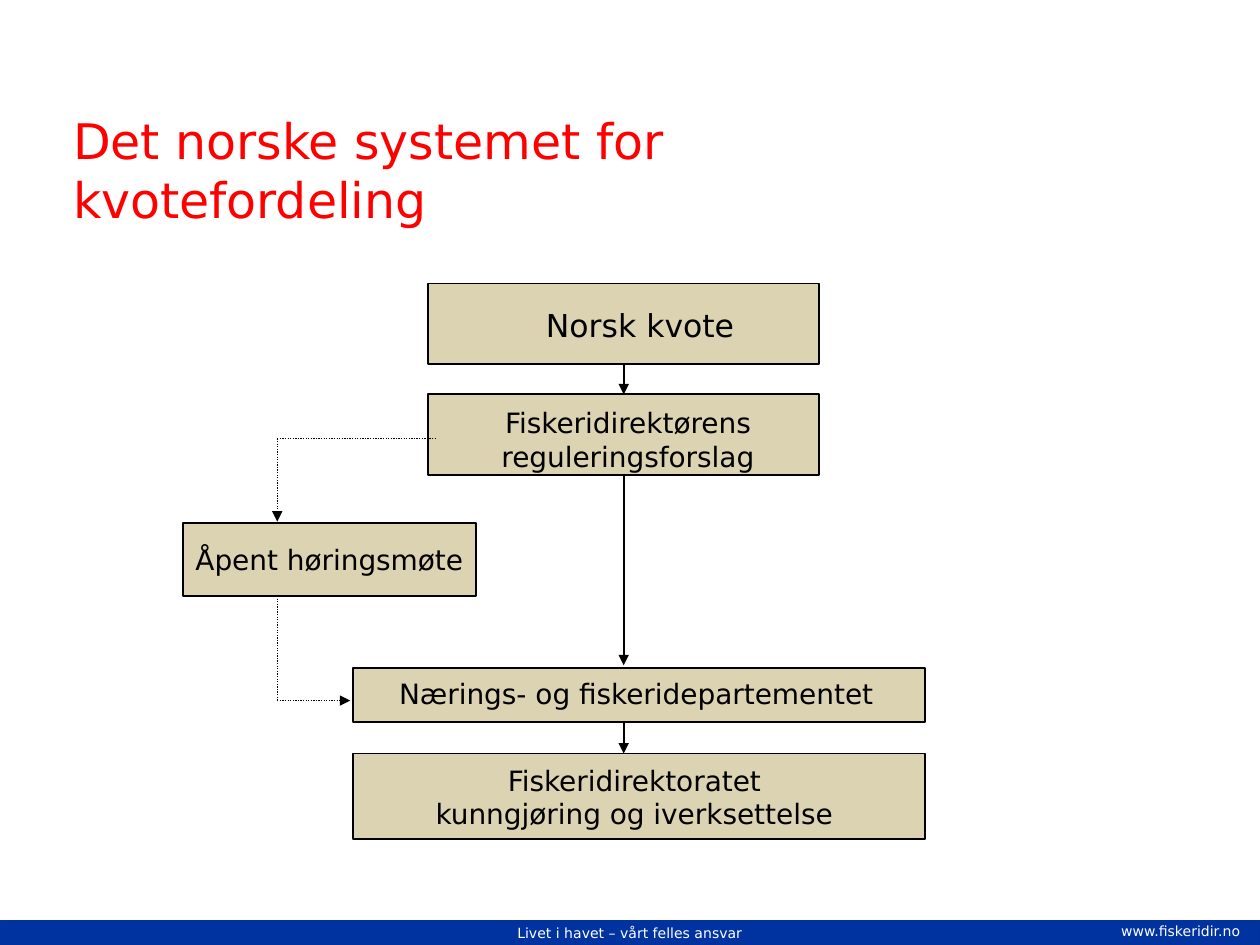
"""Build a slide showing the Norwegian quota allocation process."""
from lxml import etree
from pptx import Presentation
from pptx.dml.color import RGBColor
from pptx.enum import dml, shapes, text
from pptx.oxml import ns
from pptx.util import Inches, Pt

COLORS = {"sand": "DBD3B1", "ink": "000000", "heading": "FF0000",
          "band": "0033A0", "band_edge": "00329C", "white": "FFFFFF"}
LEFT, CENTER = text.PP_ALIGN.LEFT, text.PP_ALIGN.CENTER
TOP, MIDDLE = text.MSO_ANCHOR.TOP, text.MSO_ANCHOR.MIDDLE


class FlowSlide:
    """Hold the style and the current slide, and draw its elements."""

    font = "DejaVu Sans"

    def __init__(self, deck):
        self.slide = deck.slides.add_slide(deck.slide_layouts[5])
        self.target = self.slide.shapes

    def color(self, name):
        return RGBColor.from_string(COLORS[name])

    def set_text(self, holder, lines, size, color="ink", align=CENTER, anchor=TOP, wrap=True):
        frame = holder.text_frame
        frame.text = "\n".join(lines)
        layout = {"word_wrap": wrap, "vertical_anchor": anchor,
                  "auto_size": text.MSO_AUTO_SIZE.NONE}
        for key, value in layout.items():
            setattr(frame, key, value)
        for paragraph in frame.paragraphs:
            paragraph.alignment = align
            for key, value in {"name": self.font, "size": Pt(size)}.items():
                setattr(paragraph.font, key, value)
            paragraph.font.color.rgb = self.color(color)

    def title(self, bounds, words):
        heading = self.slide.shapes.title
        for key, value in zip(("left", "top", "width", "height"), bounds):
            setattr(heading, key, Inches(value))
        self.set_text(heading, [words], 28, "heading", LEFT, MIDDLE)

    def box(self, bounds, fill="sand", edge="ink", weight=1):
        step = self.target.add_shape(shapes.MSO_SHAPE.RECTANGLE, *map(Inches, bounds))
        step.shadow.inherit = False
        step.fill.solid()
        step.fill.fore_color.rgb = self.color(fill)
        if edge:
            step.line.color.rgb = self.color(edge)
            step.line.width = Pt(weight)
        else:
            step.line.fill.background()
        return step

    def label(self, bounds, lines, size=16, **style):
        caption = self.target.add_textbox(*map(Inches, bounds))
        self.set_text(caption, lines, size, **style)

    def link(self, start, end, arrow=True, dotted=False, source=None, goal=None):
        line = self.target.add_connector(
            shapes.MSO_CONNECTOR.STRAIGHT, *map(Inches, (*start, *end)))
        if source:
            line.begin_connect(source, 2)
        if goal:
            line.end_connect(goal, 0)
        line.line.color.rgb = self.color("ink")
        line.line.width = Pt(0.75 if dotted else 1)
        if dotted:
            line.line.dash_style = dml.MSO_LINE.ROUND_DOT
        properties = line._element.spPr
        if arrow:
            outline = properties.find(ns.qn("a:ln"))
            etree.SubElement(outline, ns.qn("a:tailEnd"), type="triangle")
        etree.SubElement(properties, ns.qn("a:effectLst"))


def main():
    deck = Presentation()
    deck.slide_width, deck.slide_height = Inches(10), Inches(7.5)
    flow = FlowSlide(deck)

    band = flow.box((0, 7.31, 10, 0.19), "band", "band_edge", 0.75)
    flow.set_text(band, ["Livet i havet – vårt felles ansvar"], 8, "white", anchor=MIDDLE)
    flow.label((8.8, 7.27, 1.92, 0.24), ["www.fiskeridir.no"], 8, color="white", align=LEFT)
    flow.title((0.48, 0.77, 6.03, 1.15), "Det norske systemet for kvotefordeling")

    proposal = flow.box((3.4, 3.13, 3.1, 0.64))
    quota = flow.box((3.4, 2.25, 3.1, 0.64))
    flow.box((2.8, 5.3, 4.54, 0.43))
    hearing = flow.box((1.45, 4.15, 2.33, 0.58))
    flow.set_text(hearing, ["Åpent høringsmøte"], 16, anchor=MIDDLE, wrap=False)

    main_x, hearing_x = 4.95, 2.2
    flow.link((main_x, 2.89), (main_x, 3.13), source=quota, goal=proposal)
    flow.link((main_x, 3.77), (main_x, 5.28), source=proposal)
    flow.link((main_x, 5.73), (main_x, 5.98))

    flow.label((4.12, 2.38, 1.92, 0.4), ["Norsk kvote"], 18)
    flow.label((3.57, 3.17, 2.83, 0.63), ["Fiskeridirektørens", "reguleringsforslag"])
    flow.label((3.04, 5.32, 4.02, 0.37), ["Nærings- og fiskeridepartementet"], wrap=False)

    flow.target = flow.slide.shapes.add_group_shape().shapes
    flow.box((2.8, 5.98, 4.54, 0.68))
    announcement = flow.box((3.24, 6.01, 3.59, 0.64), edge=None)
    flow.set_text(announcement, ["Fiskeridirektoratet", "kunngjøring og iverksettelse"], 16)
    flow.target = flow.slide.shapes

    flow.link((hearing_x, 3.48), (3.45, 3.48), arrow=False, dotted=True)
    flow.link((hearing_x, 3.48), (hearing_x, 4.14), dotted=True)
    flow.link((hearing_x, 5.56), (2.78, 5.56), dotted=True)
    flow.link((hearing_x, 4.73), (hearing_x, 5.56), arrow=False, dotted=True)

    deck.save("out.pptx")


if __name__ == "__main__":
    main()
